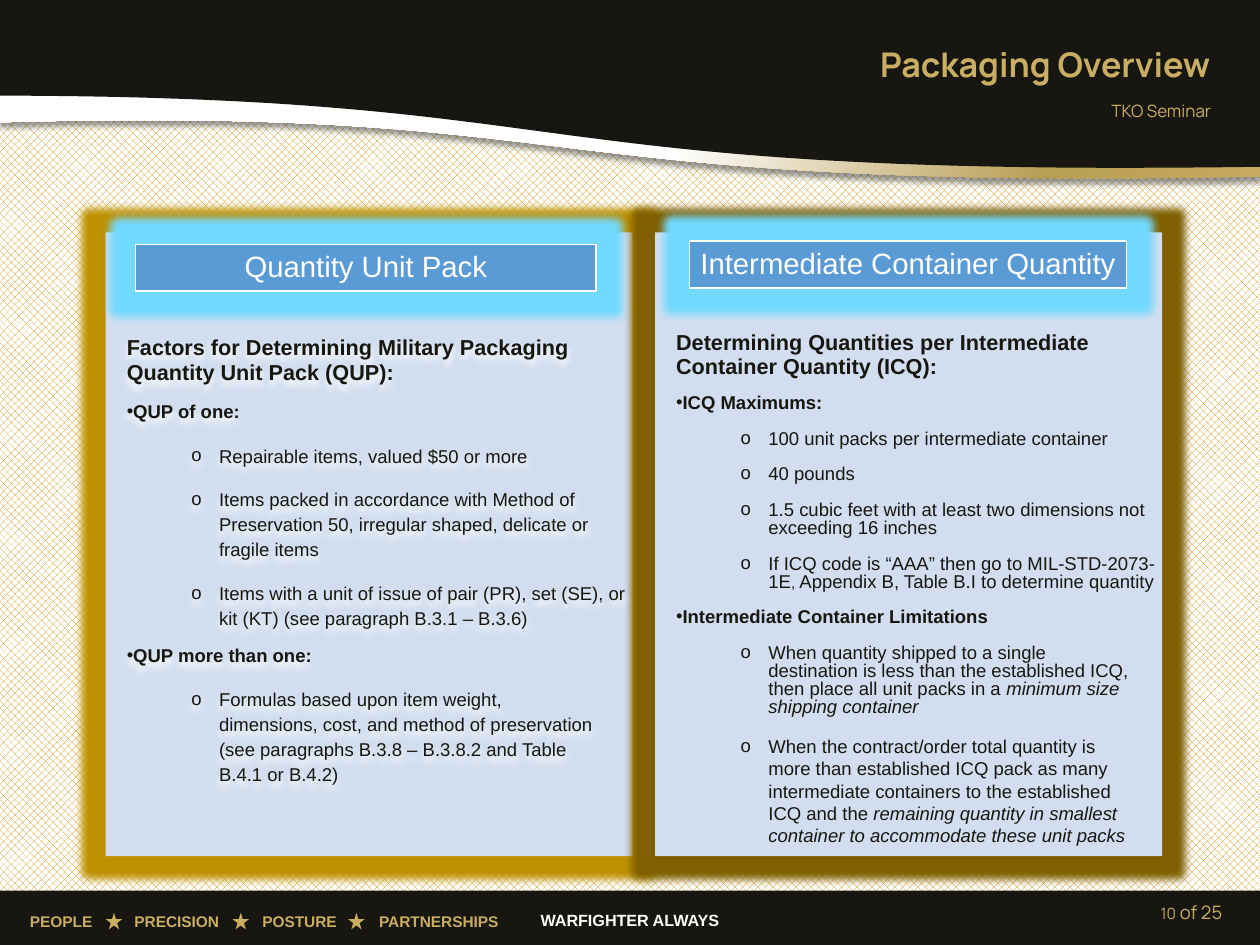
"""Build the Packaging Overview slide with two quantity panels."""
from dataclasses import dataclass

from pptx import Presentation
from pptx.dml.color import RGBColor
from pptx.enum.dml import MSO_PATTERN
from pptx.enum.shapes import MSO_SHAPE
from pptx.enum.text import MSO_ANCHOR, PP_ALIGN
from pptx.oxml import parse_xml
from pptx.oxml.ns import nsdecls, qn
from pptx.util import Inches, Pt

RECTANGLE, STAR = MSO_SHAPE.RECTANGLE, MSO_SHAPE.STAR_5_POINT
TOP, MIDDLE = MSO_ANCHOR.TOP, MSO_ANCHOR.MIDDLE
LEFT, CENTER, RIGHT = PP_ALIGN.LEFT, PP_ALIGN.CENTER, PP_ALIGN.RIGHT
DOTTED = MSO_PATTERN.PERCENT_50
LINE_BREAK = None


@dataclass(frozen=True)
class Theme:
    ink: str = "171610"
    white: str = "FFFFFF"
    black: str = "000000"
    gold: str = "C9AD62"
    amber: str = "BF9000"
    bronze: str = "7F6000"
    cyan: str = "72D9FF"
    panel: str = "D2DEEF"
    header: str = "5B9BD5"
    wave_stops: tuple = ((55, "FFFFFF"), (84, "B99E55"), (100, "C7AA61"))
    heading_font: str = "Manrope"
    body_font: str = "Arial"
    title: float = 22
    header_size: float = 19
    heading: float = 14
    body: float = 12
    subtitle: float = 11
    motto: float = 10.5
    small: float = 10
    tiny: float = 9.7


THEME = Theme()
BASE = {"name": THEME.body_font, "size": THEME.body, "color": THEME.ink}
HEADING = BASE | {"size": THEME.heading, "bold": True}
TOPIC = BASE | {"bold": True}
ITALIC = {"italic": True}
GOLD = {"name": THEME.heading_font, "color": THEME.gold}

QUP_PARAGRAPHS = [
    ("heading", {}, ["Factors for Determining Military Packaging Quantity Unit Pack (QUP):"]),
    ("topic", {"space_before": 9.8}, ["QUP of one:"]),
    ("item", {"line_spacing": Pt(16.2), "space_before": 12.3},
     ["Repairable items, valued $50 or more"]),
    ("item", {"line_spacing": Pt(16.2), "space_before": 12},
     ["Items packed in accordance with Method of Preservation 50, irregular shaped, "
      "delicate or fragile items"]),
    ("item", {"line_spacing": Pt(16.2), "space_before": 12},
     ["Items with a unit of issue of pair (PR), set (SE), or kit (KT) "
      "(see paragraph B.3.1 – B.3.6)"]),
    ("topic", {"space_before": 9.8}, ["QUP more than one:"]),
    ("item", {"line_spacing": Pt(16.2), "space_before": 12.2, "right": 0.31},
     ["Formulas based upon item weight, dimensions, cost, and method of preservation "
      "(see paragraphs B.3.8 – B.3.8.2 and Table B.4.1 or B.4.2)"]),
]
ICQ_PARAGRAPHS = [
    ("heading", {"line_spacing": Pt(15.4)},
     ["Determining Quantities per Intermediate Container Quantity (ICQ):"]),
    ("topic", {"space_before": 8.2}, ["ICQ Maximums:"]),
    ("item", {"space_before": 8.4}, ["100 unit packs per intermediate container"]),
    ("item", {"space_before": 8.4}, ["40 pounds"]),
    ("item", {"line_spacing": 0.8, "space_before": 12},
     ["1.5 cubic feet with at least two dimensions not exceeding 16 inches"]),
    ("item", {"line_spacing": 0.8, "space_before": 12},
     ["If ICQ code is “AAA” then go to MIL-STD-2073-", LINE_BREAK, "1E",
      (", ", {"size": THEME.tiny}), "Appendix B, Table B.I to determine quantity"]),
    ("topic", {"space_before": 8.2}, ["Intermediate Container Limitations"]),
    ("item", {"line_spacing": 0.8, "space_before": 12, "right": 0.22},
     ["When quantity shipped to a single destination is less than the established ICQ, "
      "then place all unit packs in a ", ("minimum size shipping container", ITALIC)]),
    ("item", {"line_spacing": Pt(14.4), "space_before": 11.9, "right": 0.22},
     ["When the contract/order total quantity is more than established ICQ pack as many "
      "intermediate containers to the established ICQ and the ",
      ("remaining quantity in smallest container to accommodate these unit packs", ITALIC)]),
]
KINDS = {
    "heading": (HEADING, None),
    "topic": (TOPIC, ("•", 0.01, -0.28, 0)),
    "item": (BASE, ("o", 0.83, -0.25, 1)),
}


def add_effect(shape, xml):
    """Put one glow or shadow on a shape."""
    shape.shadow.inherit = False
    shape._element.spPr.find(qn("a:effectLst")).append(parse_xml(xml))


def glow(color, points):
    """Return the XML of a glow."""
    return (f'<a:glow {nsdecls("a")} rad="{Pt(points)}">'
            f'<a:srgbClr val="{color}"/></a:glow>')


def drop_shadow(color, opacity):
    """Return the XML of a soft shadow that falls straight down."""
    return (f'<a:outerShdw {nsdecls("a")} blurRad="{Pt(4)}" dist="{Pt(3)}" dir="5400000" '
            f'algn="t" rotWithShape="0"><a:srgbClr val="{color}">'
            f'<a:alpha val="{opacity * 1000}"/></a:srgbClr></a:outerShdw>')


def add_shape(slide, kind, box, fill, line=None):
    """Add a painted preset shape."""
    return paint(slide.shapes.add_shape(kind, *map(Inches, box)), fill, line)


def paint(shape, fill, line=None):
    """Give a shape a plain fill and an optional thin line."""
    shape.shadow.inherit = False
    shape.fill.solid()
    shape.fill.fore_color.rgb = RGBColor.from_string(fill)
    if line:
        shape.line.color.rgb = RGBColor.from_string(line)
        shape.line.width = Pt(1)
    else:
        shape.line.fill.background()
    return shape


def add_run(paragraph, text, formats):
    """Add a run and set its font from a dict."""
    run = paragraph.add_run()
    run.text = text
    for name, value in formats.items():
        if name == "color":
            run.font.color.rgb = RGBColor.from_string(value)
        else:
            setattr(run.font, name, Pt(value) if name == "size" else value)


def add_break(paragraph, size):
    """Add a line break of the given type size."""
    paragraph._p.append(parse_xml(
        f'<a:br {nsdecls("a")}><a:rPr sz="{size * 100}"/></a:br>'))


def set_frame(shape, anchor=TOP, insets=(0.1, 0.05, 0.1, 0.05)):
    """Set wrapping, anchor and insets of a text frame."""
    frame = shape.text_frame
    formats = {"word_wrap": True, "vertical_anchor": anchor}
    sides = ("margin_left", "margin_top", "margin_right", "margin_bottom")
    formats.update(zip(sides, map(Inches, insets)))
    for name, value in formats.items():
        setattr(frame, name, value)
    return frame


def add_label(slide, box, runs, align=LEFT, anchor=TOP):
    """Add a one-paragraph text box and return its paragraph."""
    shape = slide.shapes.add_textbox(*map(Inches, box))
    paragraph = set_frame(shape, anchor).paragraphs[0]
    paragraph.alignment = align
    for text, formats in runs:
        add_run(paragraph, text, formats)
    return paragraph


def add_tabs(paragraph, stops):
    """Set left tab stops in inches."""
    tabs = "".join(f'<a:tab pos="{Inches(stop)}" algn="l"/>' for stop in stops)
    paragraph._p.get_or_add_pPr().append(
        parse_xml(f'<a:tabLst {nsdecls("a")}>{tabs}</a:tabLst>'))


def add_bullet(paragraph, mark, margin, indent, level):
    """Set the bullet, hanging indent and level of a paragraph."""
    paragraph.level = level
    properties = paragraph._p.get_or_add_pPr()
    properties.set("marL", str(Inches(margin)))
    properties.set("indent", str(Inches(indent)))
    for xml in (f'<a:buFont {nsdecls("a")} typeface="{THEME.body_font}"/>',
                f'<a:buChar {nsdecls("a")} char="{mark}"/>'):
        properties.append(parse_xml(xml))


def add_body(slide, box, top_inset, content):
    """Add a text box of headings, topics and items."""
    shape = slide.shapes.add_textbox(*map(Inches, box))
    frame = set_frame(shape, insets=(0, top_inset, 0, 0))
    for index, (kind, spacing, runs) in enumerate(content):
        paragraph = frame.add_paragraph() if index else frame.paragraphs[0]
        font, bullet = KINDS[kind]
        if bullet:
            add_bullet(paragraph, *bullet)
        for name, value in spacing.items():
            if name == "right":
                paragraph._p.get_or_add_pPr().set("marR", str(Inches(value)))
            else:
                setattr(paragraph, name, Pt(value) if name == "space_before" else value)
        for run in runs:
            if run is LINE_BREAK:
                add_break(paragraph, font["size"])
                continue
            text, extra = (run, {}) if isinstance(run, str) else run
            add_run(paragraph, text, font | extra)
    return shape


def add_panel(slide, box, color, header_box, header):
    """Add a glowing panel with its glowing header bar."""
    add_effect(add_shape(slide, RECTANGLE, box, THEME.panel), glow(color, 10))
    bar = add_shape(slide, RECTANGLE, header_box, THEME.header, THEME.white)
    add_effect(bar, glow(THEME.cyan, 11))
    paragraph = set_frame(bar, MIDDLE, (0.04,) * 4).paragraphs[0]
    paragraph.alignment, paragraph.line_spacing = CENTER, 0.9
    add_run(paragraph, header, BASE | {"size": THEME.header_size, "color": THEME.white})


def add_wave(slide, top, curve, steps=60):
    """Add a band whose lower edge follows a cubic curve."""
    edge = []
    for step in range(steps + 1):
        t = step / steps
        weights = ((1 - t) ** 3, 3 * t * (1 - t) ** 2, 3 * t * t * (1 - t), t ** 3)
        edge.append(tuple(Inches(sum(w * point[axis] for w, point in zip(weights, curve)))
                          for axis in (0, 1)))
    builder = slide.shapes.build_freeform(Inches(11.33), Inches(top), scale=1.0)
    builder.add_line_segments([(edge[0][0], Inches(top))] + edge, close=True)
    return paint(builder.convert_to_shape(), THEME.ink)


def add_masthead(slide):
    """Add the two waves, the title and the subtitle."""
    ribbon = add_wave(slide, 0.59, ((0, 1.1), (5.49, 0.95), (4.54, 1.72), (11.33, 1.59)))
    stops = "".join(f'<a:gs pos="{place * 1000}"><a:srgbClr val="{color}"/></a:gs>'
                    for place, color in THEME.wave_stops)
    properties = ribbon._element.spPr
    properties.replace(properties.find(qn("a:solidFill")), parse_xml(
        f'<a:gradFill {nsdecls("a")}><a:gsLst>{stops}</a:gsLst><a:path path="circle">'
        '<a:fillToRect r="100000" b="100000"/></a:path></a:gradFill>'))
    add_effect(ribbon, drop_shadow(THEME.black, 40))
    add_wave(slide, -0.01, ((-0.01, 0.86), (5.46, 0.87), (4.52, 1.6), (11.33, 1.5)))
    subtitle = add_label(slide, (6.35, 0.88, 4.64, 0.47),
                         [("TKO Seminar", GOLD | {"size": THEME.subtitle})], RIGHT)
    subtitle.line_spacing = 0.9
    add_label(slide, (2.66, 0.34, 8.32, 0.47),
              [("Packaging Overview", GOLD | {"size": THEME.title, "bold": True})],
              RIGHT, MIDDLE)


def add_footer(slide):
    """Add the footer bar with its values, stars, motto and page number."""
    add_shape(slide, RECTANGLE, (0, 8.01, 11.33, 0.49), THEME.ink)
    bold = BASE | {"bold": True}
    add_label(slide, (4.47, 8.14, 2.39, 0.28),
              [("WARFIGHTER ALWAYS", bold | {"size": THEME.motto, "color": THEME.white})],
              CENTER)
    values = add_label(slide, (0.17, 8.15, 4.61, 0.28),
                       [("PEOPLE\tPRECISION\tPOSTURE\tPARTNERSHIPS",
                         bold | {"size": THEME.small, "color": THEME.gold})])
    add_tabs(values, (0.94, 2.09, 3.14))
    for left in (0.95, 2.09, 3.13):
        add_shape(slide, STAR, (left, 8.21, 0.15, 0.15), THEME.gold)
    add_label(slide, (7.73, 7.98, 3.36, 0.45),
              [("10", GOLD | {"size": THEME.small}), (" of 25", GOLD | {"size": THEME.body})],
              RIGHT, MIDDLE)


def main():
    """Build and save the slide."""
    presentation = Presentation()
    presentation.slide_width, presentation.slide_height = Inches(11.33), Inches(8.5)
    slide = presentation.slides.add_slide(presentation.slide_layouts[6])
    background = slide.background.fill
    background.patterned()
    background.pattern = DOTTED
    background.fore_color.rgb = RGBColor.from_string(THEME.amber)
    background.back_color.rgb = RGBColor.from_string(THEME.white)
    add_masthead(slide)
    add_footer(slide)
    add_panel(slide, (0.95, 2.09, 4.74, 5.61), THEME.amber,
              (1.22, 2.2, 4.14, 0.42), "Quantity Unit Pack")
    add_panel(slide, (5.89, 2.09, 4.56, 5.61), THEME.bronze,
              (6.2, 2.17, 3.93, 0.42), "Intermediate Container Quantity")
    quantity_text = add_body(slide, (1.14, 2.95, 4.55, 4.1), 0.05, QUP_PARAGRAPHS)
    add_effect(quantity_text, drop_shadow(THEME.white, 100))
    add_body(slide, (6.08, 2.91, 4.33, 4.69), 0.07, ICQ_PARAGRAPHS)
    presentation.save("out.pptx")


if __name__ == "__main__":
    main()
